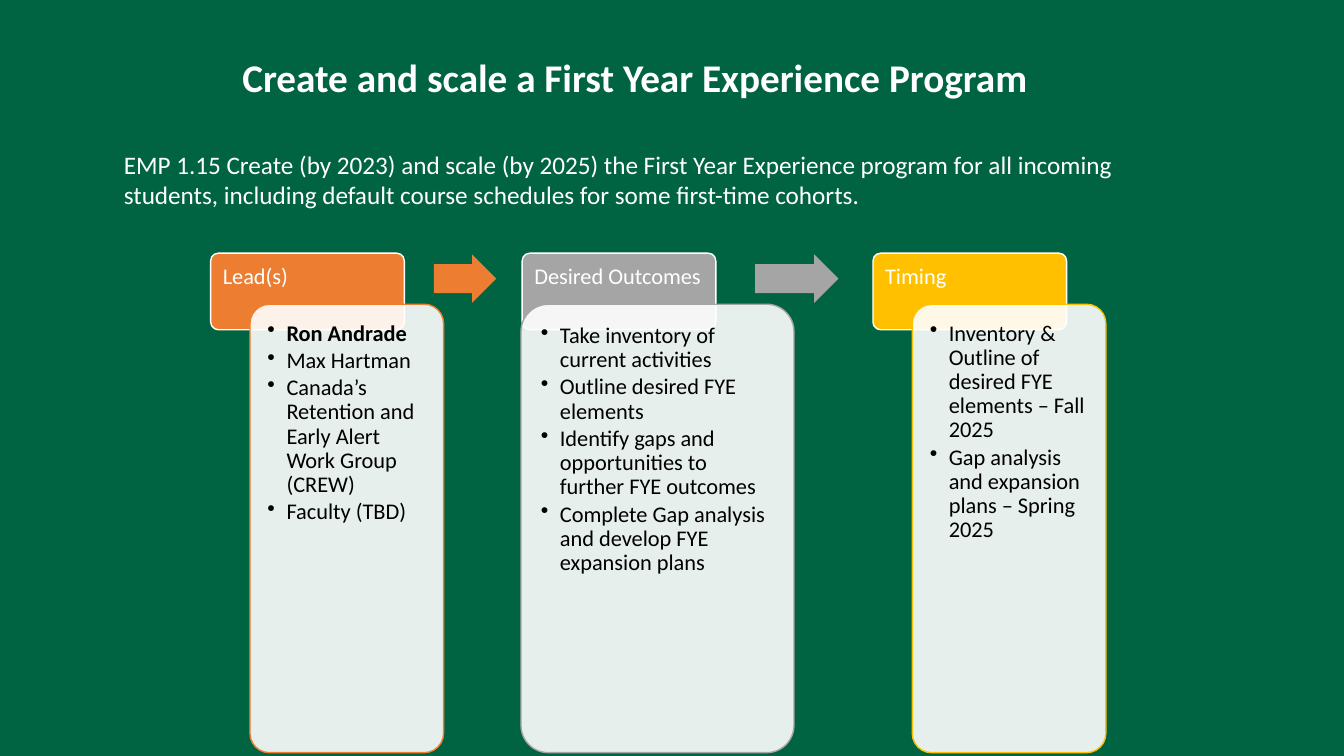
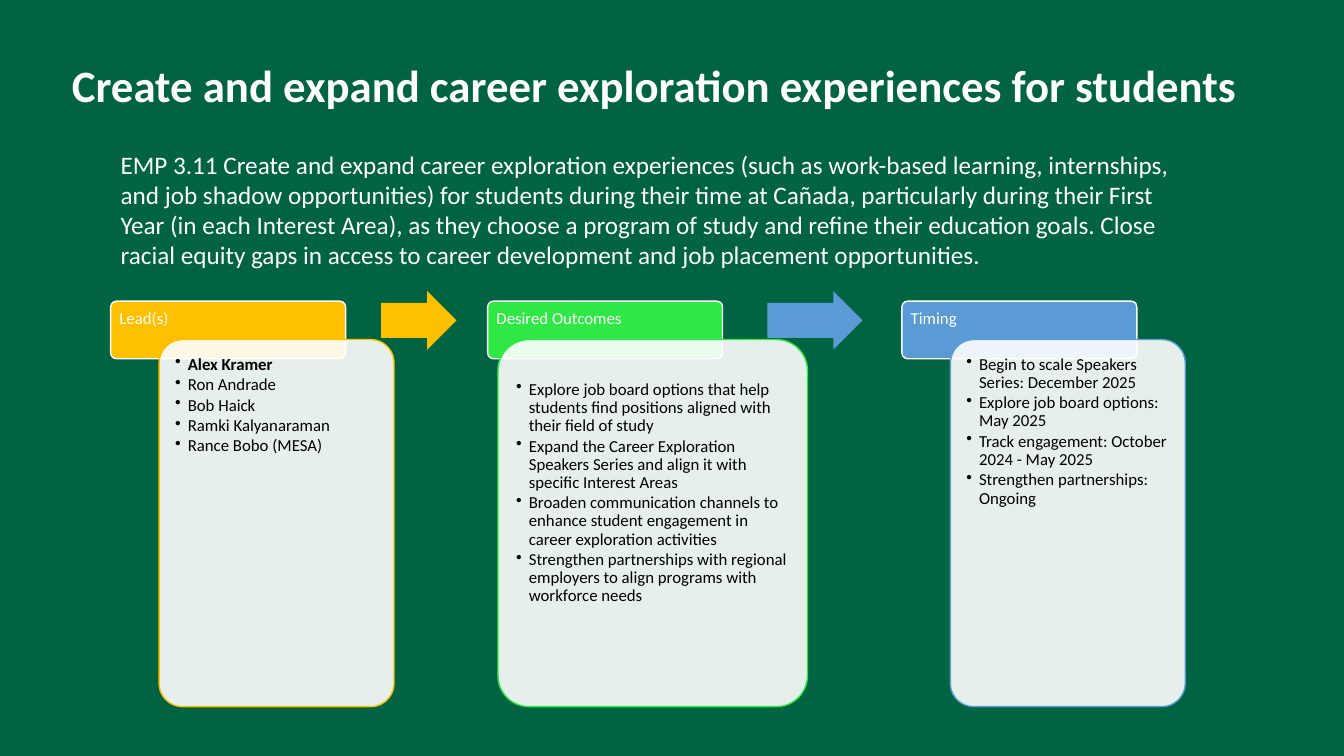
"""Build two plan slides with leads, outcomes and timing."""
import pptx
import pptx.util
import pptx.dml.color
import pptx.enum.shapes
import pptx.enum.text
import pptx.oxml.ns
import lxml.etree

Cm, Pt = pptx.util.Cm, pptx.util.Pt
RGB = pptx.dml.color.RGBColor
SHAPE = pptx.enum.shapes.MSO_SHAPE
TEXT = pptx.enum.text
qn = pptx.oxml.ns.qn

GREEN = RGB(0x00, 0x63, 0x42)
WHITE = RGB(0xFF, 0xFF, 0xFF)
BLACK = RGB(0x00, 0x00, 0x00)
ORANGE = RGB(0xED, 0x7D, 0x31)
GREY = RGB(0xA5, 0xA5, 0xA5)
GOLD = RGB(0xFF, 0xC0, 0x00)
LIME = RGB(0x30, 0xE8, 0x45)
BLUE = RGB(0x5B, 0x9B, 0xD5)
FONT = "Calibri"
HEADS = ["Lead(s)", "Desired Outcomes", "Timing"]

PLANS = [
    {
        "title": "Create and scale a First Year Experience Program",
        "title_box": (5.72, 1.22, 20.55, 1.45), "title_size": 28,
        "goal": "EMP 1.15 Create (by 2023) and scale (by 2025) the First Year Experience program "
                "for all incoming students, including default course schedules for some "
                "first-time cohorts.",
        "goal_box": (2.87, 3.63, 27.41, 1.8),
        "size": 16, "pad": 0.3, "hang": 0.48,
        "top": 6.38, "tab": (4.88, 1.93), "deep": 11.3, "arrow": 1.22,
        "arrows": [ORANGE, GREY],
        "cols": [
            {"hue": ORANGE, "tab": 5.31, "card": 6.3, "wide": 4.88, "drop": 0,
             "items": ["Ron Andrade", "Max Hartman",
                       "Canada’s Retention and Early Alert Work Group (CREW)",
                       "Faculty (TBD)"]},
            {"hue": GREY, "tab": 13.16, "card": 13.13, "wide": 6.88, "drop": 0,
             "items": ["Take inventory of current activities",
                       "Outline desired FYE elements",
                       "Identify gaps and opportunities to further FYE outcomes",
                       "Complete Gap analysis and develop FYE expansion plans"]},
            {"hue": GOLD, "tab": 22, "card": 22.99, "wide": 4.88, "drop": 0,
             "items": ["Inventory & Outline of desired FYE elements – Fall 2025",
                       "Gap analysis and expansion plans – Spring 2025"]},
        ],
    },
    {
        "title": "Create and expand career exploration experiences for students",
        "title_box": (1.52, 1.32, 29.95, 1.63), "title_size": 32,
        "goal": "EMP 3.11 Create and expand career exploration experiences (such as work-based "
                "learning, internships, and job shadow opportunities) for students during their "
                "time at Cañada, particularly during their First Year (in each Interest Area), "
                "as they choose a program of study and refine their education goals. Close "
                "racial equity gaps in access to career development and job placement "
                "opportunities.",
        "goal_box": (2.79, 3.63, 27.41, 3.33),
        "size": 12, "pad": 0.23, "hang": 0.32,
        "top": 7.59, "tab": (5.92, 1.45), "deep": 9.25, "arrow": 1.47,
        "arrows": [GOLD, BLUE],
        "cols": [
            {"hue": GOLD, "tab": 2.79, "card": 4.01, "wide": 5.92, "drop": 0,
             "items": ["Alex Kramer", "Ron Andrade", "Bob Haick", "Ramki Kalyanaraman",
                       "Rance Bobo (MESA)"]},
            {"hue": LIME, "tab": 12.29, "card": 12.55, "wide": 7.8, "drop": 0.58,
             "items": ["Explore job board options that help students find positions aligned "
                       "with their field of study",
                       "Expand the Career Exploration Speakers Series and align it with "
                       "specific Interest Areas",
                       "Broaden communication channels to enhance student engagement in "
                       "career exploration activities",
                       "Strengthen partnerships with regional employers to align programs "
                       "with workforce needs"]},
            {"hue": BLUE, "tab": 22.73, "card": 23.95, "wide": 5.92, "drop": 0,
             "items": ["Begin to scale Speakers Series: December 2025",
                       "Explore job board options: May 2025",
                       "Track engagement: October 2024 - May 2025",
                       "Strengthen partnerships: Ongoing"]},
        ],
    },
]


def style(para, size, hue, bold=False):
    font = para.font
    font.name, font.size, font.bold = FONT, Pt(size), bold
    font.color.rgb = hue


def frame(shape, pads=None):
    box = shape.text_frame
    box.word_wrap = True
    box.auto_size = TEXT.MSO_AUTO_SIZE.NONE
    box.vertical_anchor = TEXT.MSO_ANCHOR.TOP
    if pads:
        (box.margin_left, box.margin_top,
         box.margin_right, box.margin_bottom) = [Cm(pad) for pad in pads]
    return box


def draw(slide, kind, box, fill, line=None):
    shape = slide.shapes.add_shape(kind, *[Cm(part) for part in box])
    shape.shadow.inherit = False
    shape.fill.solid()
    shape.fill.fore_color.rgb = fill
    if line is None:
        shape.line.fill.background()
    else:
        shape.line.color.rgb = line
        shape.line.width = Pt(1)
    return shape


def round_box(slide, box, fill, line):
    shape = draw(slide, SHAPE.ROUNDED_RECTANGLE, box, fill, line)
    shape.adjustments[0] = 0.1
    return shape


def write(box, texts, size, hue, hang=0, lead=False):
    for at, text in enumerate(texts):
        para = box.paragraphs[0] if at == 0 else box.add_paragraph()
        para.text = text
        para.alignment = TEXT.PP_ALIGN.LEFT
        para.line_spacing = 0.9
        para.space_after = Pt(size * 0.14)
        style(para, size, hue, lead and at == 0)
        if hang:
            props = para._p.get_or_add_pPr()
            props.set("marL", str(Cm(hang)))
            props.set("indent", str(-Cm(hang)))
            mark = lxml.etree.Element(qn("a:buChar"), char="•")
            props.find(qn("a:spcAft")).addnext(mark)


def add_head(slide, plan):
    title = slide.shapes.title
    goal = slide.shapes.add_textbox(0, 0, 0, 0)
    for shape, name, size in ((title, "title", plan["title_size"]), (goal, "goal", 18)):
        (shape.left, shape.top,
         shape.width, shape.height) = [Cm(part) for part in plan[name + "_box"]]
        box = frame(shape)
        box.text = plan[name]
        style(box.paragraphs[0], size, WHITE, shape is title)
    title.text_frame.paragraphs[0].alignment = TEXT.PP_ALIGN.CENTER


def add_col(slide, plan, col, head):
    wide, high = plan["tab"]
    pad, size = plan["pad"], plan["size"]
    tab = round_box(slide, (col["tab"], plan["top"], wide, high), col["hue"], WHITE)
    write(frame(tab, [pad - 0.05] * 4), [head], size, WHITE)
    card_top = plan["top"] + high * 2 / 3
    card = round_box(slide, (col["card"], card_top, col["wide"], plan["deep"]),
                     WHITE, col["hue"])
    tint = card._element.spPr.find(qn("a:solidFill"))[0]
    lxml.etree.SubElement(tint, qn("a:alpha"), val="90000")
    box = frame(card, (pad, pad + col["drop"], pad, pad))
    write(box, col["items"], size, BLACK, plan["hang"], head == HEADS[0])


def add_arrows(slide, plan):
    wide, high = plan["tab"]
    top = plan["top"] + high / 3 - plan["arrow"] / 2
    for hue, col, after in zip(plan["arrows"], plan["cols"], plan["cols"][1:]):
        edge = col["tab"] + wide
        gap = after["tab"] - edge
        box = (edge + gap * 0.25, top, gap * 0.53, plan["arrow"])
        arrow = draw(slide, SHAPE.RIGHT_ARROW, box, hue)
        arrow.adjustments[0] = 0.6


def main():
    deck = pptx.Presentation()
    deck.slide_width, deck.slide_height = Cm(33.87), Cm(19.05)
    back = deck.slide_master.background.fill
    back.solid()
    back.fore_color.rgb = GREEN
    for plan in PLANS:
        slide = deck.slides.add_slide(deck.slide_layouts[5])
        add_head(slide, plan)
        for col, head in zip(plan["cols"], HEADS):
            add_col(slide, plan, col, head)
        add_arrows(slide, plan)
    deck.save("out.pptx")


if __name__ == "__main__":
    main()
